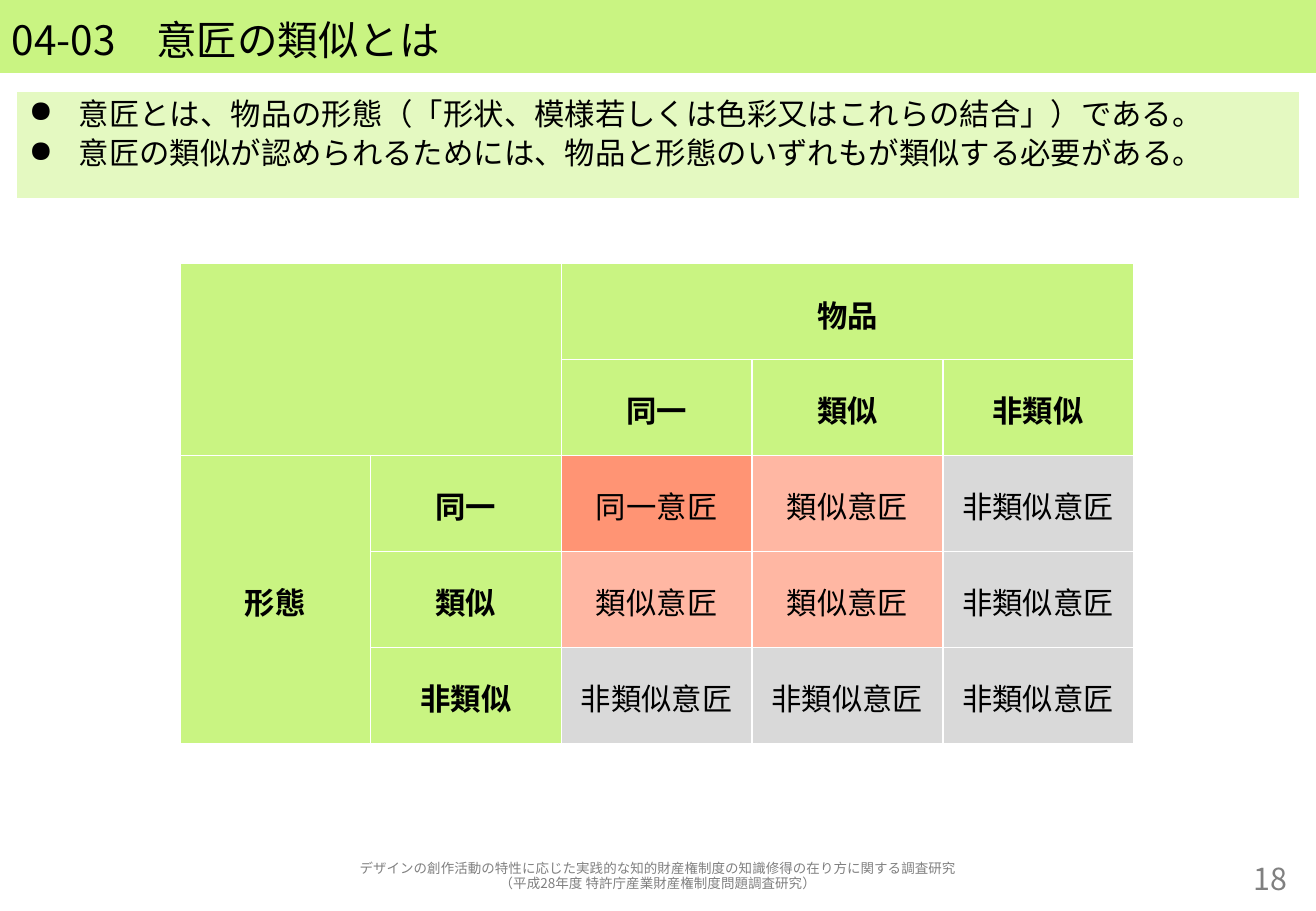
from lxml import etree
from pptx import Presentation
from pptx.dml.color import RGBColor
from pptx.enum.shapes import MSO_SHAPE
from pptx.enum.text import MSO_ANCHOR, PP_ALIGN
from pptx.oxml.ns import qn
from pptx.util import Inches, Pt

RECTANGLE = MSO_SHAPE.RECTANGLE
TOP, MIDDLE = MSO_ANCHOR.TOP, MSO_ANCHOR.MIDDLE
LEFT, CENTER, RIGHT = PP_ALIGN.LEFT, PP_ALIGN.CENTER, PP_ALIGN.RIGHT

COLORS = {
    "text": "000000",
    "footer": "808080",
    "border": "FFFFFF",
    "header": "C9F482",
    "summary": "E4F9C1",
    "identical": "FF9474",
    "similar": "FFB7A3",
    "dissimilar": "D9D9D9",
}
JAPANESE_FONT = "Noto Sans CJK JP"
TABLE_FONT = "Arial"
SINGLE_LINE, STACKED_LINES = 1.1, 0.92

CELL_SIZE = (1.57, 0.79)
DEGREES = ["同一", "類似", "非類似"]
VERDICTS = ["identical", "similar", "dissimilar"]
VERDICT_LABELS = [degree + "意匠" for degree in DEGREES]


class SlideBuilder:
    def __init__(self, slide):
        self.slide = slide

    def color(self, name):
        return RGBColor.from_string(COLORS[name])

    def set_text(self, frame, lines, size, align=LEFT, color="text",
                 font=JAPANESE_FONT, bold=False):
        frame.text = "\n".join(lines)
        for paragraph in frame.paragraphs:
            paragraph.alignment = align
            paragraph.line_spacing = SINGLE_LINE if len(lines) == 1 else STACKED_LINES
            for run in paragraph.runs:
                run.font.size = Pt(size)
                run.font.bold = bold
                run.font.name = font
                run.font.color.rgb = self.color(color)
                east_asian = etree.SubElement(run._r.get_or_add_rPr(), qn("a:ea"))
                east_asian.set("typeface", JAPANESE_FONT)

    def panel(self, box, fill, lines, size, anchor):
        shape = self.slide.shapes.add_shape(RECTANGLE, *map(Inches, box))
        shape.shadow.inherit = False
        shape.fill.solid()
        shape.fill.fore_color.rgb = self.color(fill)
        shape.line.fill.background()
        shape.text_frame.vertical_anchor = anchor
        self.set_text(shape.text_frame, lines, size)
        return shape

    def bullets(self, frame, indent, space_before):
        for paragraph in frame.paragraphs:
            paragraph.space_before = Pt(space_before)
            properties = paragraph._p.get_or_add_pPr()
            properties.set("marL", str(Inches(indent)))
            properties.set("indent", str(-Inches(indent)))
            etree.SubElement(properties, qn("a:buChar")).set("char", "●")

    def footer(self, box, lines, size, align):
        shape = self.slide.shapes.add_textbox(*map(Inches, box))
        shape.text_frame.word_wrap = True
        shape.text_frame.vertical_anchor = MIDDLE
        self.set_text(shape.text_frame, lines, size, align, "footer")

    def table(self, left, top, rows, columns):
        width, height = CELL_SIZE
        table = self.slide.shapes.add_table(
            rows, columns, Inches(left), Inches(top),
            Inches(width * columns), Inches(height * rows)).table
        table.first_row = table.horz_banding = False
        for cell in table.iter_cells():
            self.cell(cell, "header")
        return table

    def cell(self, cell, fill, label="", bold=False):
        cell.fill.solid()
        cell.fill.fore_color.rgb = self.color(fill)
        cell.vertical_anchor = MIDDLE
        self.set_text(cell.text_frame, [label], 18, CENTER, font=TABLE_FONT, bold=bold)
        self.borders(cell)

    def borders(self, cell):
        properties = cell._tc.get_or_add_tcPr()
        for position, side in enumerate(("lnL", "lnR", "lnT", "lnB")):
            for old_line in properties.findall(qn("a:" + side)):
                properties.remove(old_line)
            line = etree.Element(qn("a:" + side), w=str(Pt(1)))
            fill = etree.SubElement(line, qn("a:solidFill"))
            etree.SubElement(fill, qn("a:srgbClr")).set("val", COLORS["border"])
            properties.insert(position, line)


def add_similarity_table(builder):
    table = builder.table(1.48, 2.17, 5, 5)
    table.cell(0, 0).merge(table.cell(1, 1))
    table.cell(0, 2).merge(table.cell(0, 4))
    table.cell(2, 0).merge(table.cell(4, 0))
    builder.cell(table.cell(0, 2), "header", "物品", bold=True)
    builder.cell(table.cell(2, 0), "header", "形態", bold=True)
    for row, degree in enumerate(DEGREES):
        builder.cell(table.cell(1, row + 2), "header", degree, bold=True)
        builder.cell(table.cell(row + 2, 1), "header", degree, bold=True)
        for column in range(len(DEGREES)):
            # The weaker of the two degrees decides the verdict.
            verdict = max(row, column)
            builder.cell(table.cell(row + 2, column + 2),
                         VERDICTS[verdict], VERDICT_LABELS[verdict])


def main():
    presentation = Presentation()
    presentation.slide_width = Inches(10.83)
    presentation.slide_height = Inches(7.5)
    slide = presentation.slides.add_slide(presentation.slide_layouts[6])
    builder = SlideBuilder(slide)

    builder.panel((0, 0, 10.83, 0.6), "header", ["04-03　意匠の類似とは"], 24, MIDDLE)
    summary = builder.panel((0.14, 0.76, 10.55, 0.87), "summary", [
        "意匠とは、物品の形態（「形状、模様若しくは色彩又はこれらの結合」）である。",
        "意匠の類似が認められるためには、物品と形態のいずれもが類似する必要がある。",
    ], 18, TOP)
    builder.bullets(summary.text_frame, indent=0.41, space_before=3.6)
    builder.footer((9.35, 7.06, 1.34, 0.31), ["18"], 18, RIGHT)
    add_similarity_table(builder)
    builder.footer((0.14, 7.06, 10.55, 0.31), [
        "デザインの創作活動の特性に応じた実践的な知的財産権制度の知識修得の在り方に関する調査研究",
        "（平成28年度 特許庁産業財産権制度問題調査研究）",
    ], 8, CENTER)
    presentation.save("out.pptx")


if __name__ == "__main__":
    main()
